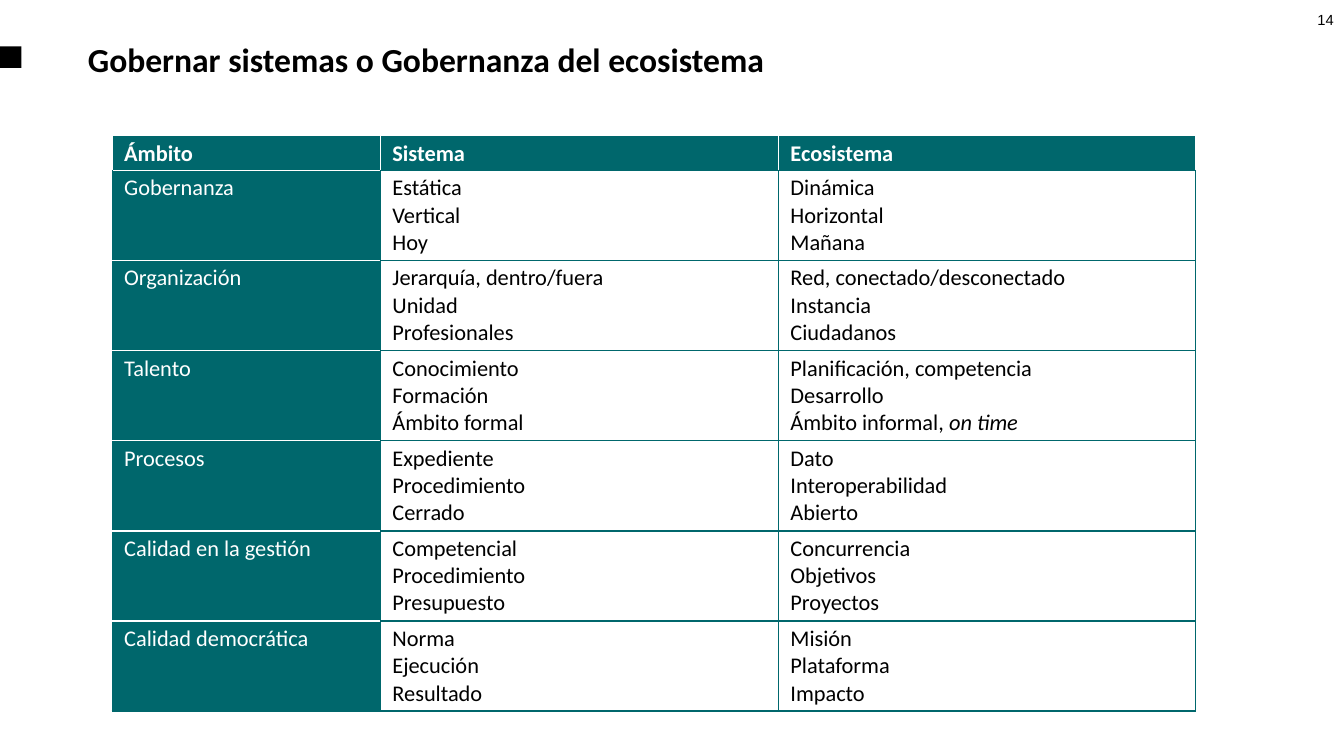
from lxml import etree
from pptx import Presentation
from pptx.dml.color import RGBColor
from pptx.enum.shapes import MSO_SHAPE
from pptx.enum.text import MSO_ANCHOR, MSO_AUTO_SIZE, PP_ALIGN
from pptx.oxml.ns import qn
from pptx.util import Cm, Pt

RECTANGLE = MSO_SHAPE.RECTANGLE
LEFT, RIGHT = PP_ALIGN.LEFT, PP_ALIGN.RIGHT
MIDDLE = MSO_ANCHOR.MIDDLE
NO_AUTOFIT = MSO_AUTO_SIZE.NONE

TEAL = RGBColor(0x00, 0x67, 0x6C)
WHITE = RGBColor(0xFF, 0xFF, 0xFF)
BLACK = RGBColor(0x00, 0x00, 0x00)

TITLE = "Gobernar sistemas o Gobernanza del ecosistema"
COLUMN_WIDTHS = (6.76, 10.03, 10.51)
HEADER_HEIGHT, ROW_HEIGHT = 0.87, 2.27
# Text between asterisks is set in italics.
ROWS = [
    ("Ámbito", "Sistema", "Ecosistema"),
    ("Gobernanza", "Estática\nVertical\nHoy", "Dinámica\nHorizontal\nMañana"),
    ("Organización", "Jerarquía, dentro/fuera\nUnidad\nProfesionales",
     "Red, conectado/desconectado\nInstancia\nCiudadanos"),
    ("Talento", "Conocimiento\nFormación\nÁmbito formal",
     "Planificación, competencia\nDesarrollo\nÁmbito informal, *on time*"),
    ("Procesos", "Expediente\nProcedimiento\nCerrado",
     "Dato\nInteroperabilidad\nAbierto"),
    ("Calidad en la gestión", "Competencial\nProcedimiento\nPresupuesto",
     "Concurrencia\nObjetivos\nProyectos"),
    ("Calidad democrática", "Norma\nEjecución\nResultado",
     "Misión\nPlataforma\nImpacto"),
]


def format_font(font, name, size, color, bold=False):
    font.name, font.size, font.bold = name, Pt(size), bold
    font.color.rgb = color


def add_marker(slide):
    sp = slide.shapes.add_shape(RECTANGLE, Cm(0), Cm(1.17), Cm(0.54), Cm(0.54))
    sp.shadow.inherit = False
    sp.fill.solid()
    sp.fill.fore_color.rgb = BLACK
    sp.line.fill.background()


def add_page_number(slide, number):
    sp = slide.shapes.add_textbox(Cm(32.49), Cm(0.15), Cm(1.37), Cm(1.02))
    tf = sp.text_frame
    tf.word_wrap = True
    p = tf.paragraphs[0]
    p.text = number
    p.alignment = RIGHT
    format_font(p.runs[0].font, "Arial", 10.5, BLACK)


def format_title(slide):
    sp = slide.shapes.title
    sp.left, sp.top, sp.width, sp.height = Cm(1.96), Cm(0.64), Cm(30), Cm(1.68)
    tf = sp.text_frame
    tf.text = TITLE
    tf.auto_size = NO_AUTOFIT
    tf.vertical_anchor = MIDDLE
    p = tf.paragraphs[0]
    p.alignment = LEFT
    format_font(p.runs[0].font, "Calibri", 24, BLACK, bold=True)


def set_borders(cell, colors):
    """Draw 1 pt borders; colors are given for left, right, top and bottom."""
    tc_pr = cell._tc.get_or_add_tcPr()
    for tag, color in zip(("a:lnL", "a:lnR", "a:lnT", "a:lnB"), colors):
        ln = etree.SubElement(tc_pr, qn(tag), w=str(Pt(1)))
        fill = etree.SubElement(ln, qn("a:solidFill"))
        etree.SubElement(fill, qn("a:srgbClr"), val=str(color))


def border_colors(row, col):
    if row == 0:
        return WHITE, WHITE, WHITE, WHITE if col == 0 else TEAL
    if col == 0:
        return TEAL, TEAL, WHITE, TEAL if row == len(ROWS) - 1 else WHITE
    return TEAL, TEAL, TEAL, TEAL


def fill_cell(cell, text, row, col):
    dark = row == 0 or col == 0
    set_borders(cell, border_colors(row, col))
    cell.fill.solid()
    cell.fill.fore_color.rgb = TEAL if dark else WHITE
    cell.margin_left, cell.margin_right = Cm(0.3), Cm(0.2)
    cell.margin_top = cell.margin_bottom = Cm(0.1)
    tf = cell.text_frame
    for i, line in enumerate(text.split("\n")):
        p = tf.add_paragraph() if i else tf.paragraphs[0]
        for j, part in enumerate(line.split("*")):
            if part:
                r = p.add_run()
                r.text = part
                r.font.italic = j % 2 == 1
                format_font(r.font, "Calibri", 16, WHITE if dark else BLACK,
                            bold=row == 0)


def add_comparison_table(slide):
    height = HEADER_HEIGHT + ROW_HEIGHT * (len(ROWS) - 1)
    table = slide.shapes.add_table(
        len(ROWS), len(COLUMN_WIDTHS), Cm(2.83), Cm(3.42),
        Cm(sum(COLUMN_WIDTHS)), Cm(height)).table
    table.horz_banding = False
    for column, width in zip(table.columns, COLUMN_WIDTHS):
        column.width = Cm(width)
    for i, texts in enumerate(ROWS):
        table.rows[i].height = Cm(ROW_HEIGHT if i else HEADER_HEIGHT)
        for j, text in enumerate(texts):
            fill_cell(table.cell(i, j), text, i, j)


def main():
    prs = Presentation()
    prs.slide_width, prs.slide_height = Cm(33.87), Cm(19.05)
    slide = prs.slides.add_slide(prs.slide_layouts.get_by_name("Title Only"))
    add_marker(slide)
    add_page_number(slide, "14")
    format_title(slide)
    add_comparison_table(slide)
    prs.save("out.pptx")


if __name__ == "__main__":
    main()
